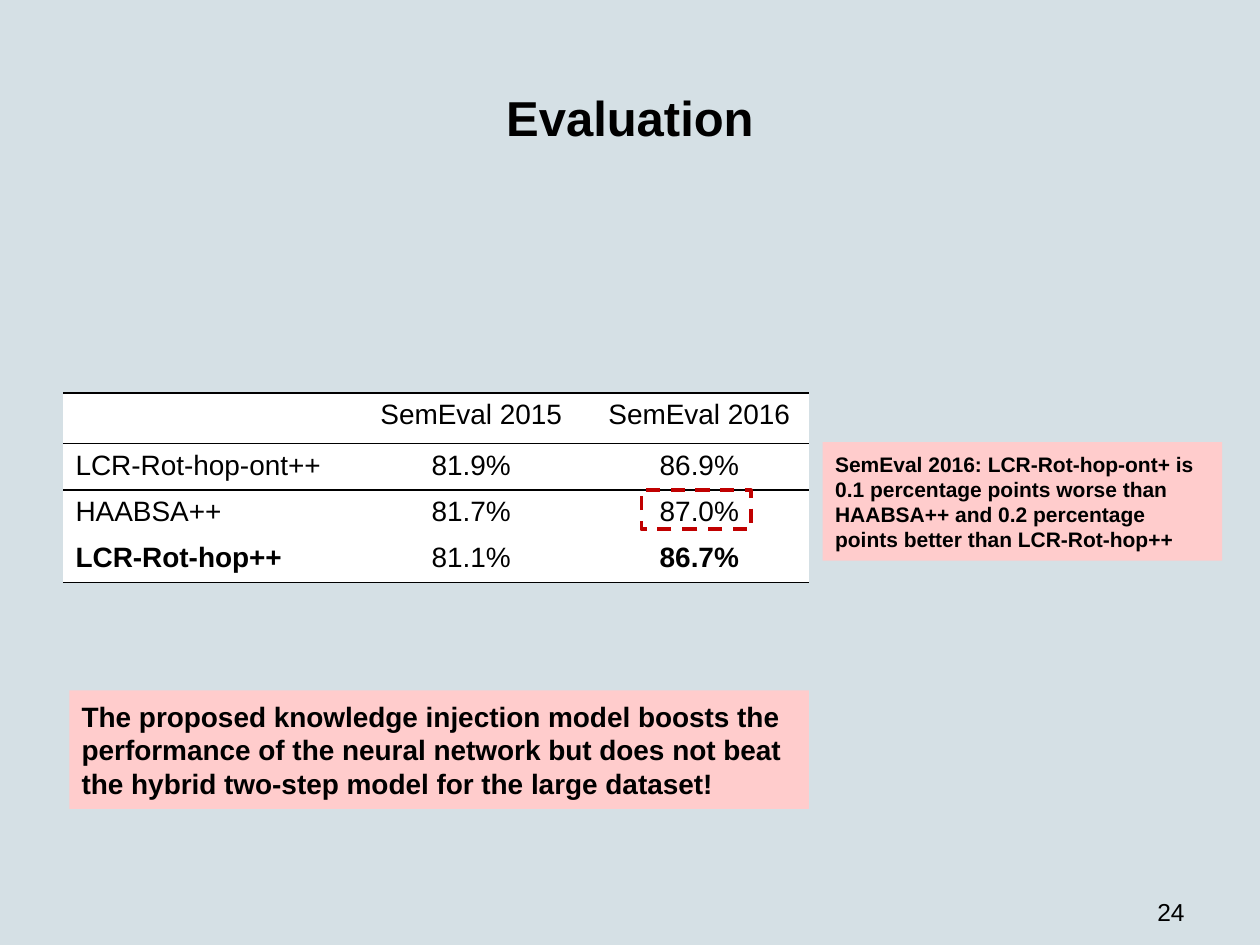
from lxml import etree
from pptx import Presentation
from pptx.dml.color import RGBColor
from pptx.enum.dml import MSO_LINE
from pptx.enum.shapes import MSO_SHAPE
from pptx.enum.text import MSO_ANCHOR, PP_ALIGN
from pptx.oxml.ns import qn
from pptx.util import Inches, Pt

RECTANGLE = MSO_SHAPE.RECTANGLE
DASH = MSO_LINE.DASH
MIDDLE, BOTTOM = MSO_ANCHOR.MIDDLE, MSO_ANCHOR.BOTTOM
LEFT, CENTER, RIGHT = PP_ALIGN.LEFT, PP_ALIGN.CENTER, PP_ALIGN.RIGHT

COLORS = {
    "background": "D5E0E5",
    "text": "000000",
    "rule": "000000",
    "cell": "FFFFFF",
    "callout": "FFCCCC",
    "highlight": "C00000",
}

RESULTS = [
    ["", "SemEval 2015", "SemEval 2016"],
    ["LCR-Rot-hop-ont++", "81.9%", "86.9%"],
    ["HAABSA++", "81.7%", "87.0%"],
    ["LCR-Rot-hop++", "81.1%", "86.7%"],
]
BOLD_CELLS = {(3, 0), (3, 2)}
RULED_EDGES = {0, 1, 2, 4}  # horizontal table edges, counted from the top


def color(name):
    return RGBColor.from_string(COLORS[name])


def set_format(target, values):
    for name, value in values.items():
        setattr(target, name, value)


class SlideBuilder:
    """Holds the text style and the slide being built."""

    font_name = "Arial"

    def __init__(self, slide):
        self.slide = slide
        self.fill(slide.background, "background")

    def fill(self, target, color_name):
        target.fill.solid()
        target.fill.fore_color.rgb = color(color_name)

    def add_words(self, frame, text, size, bold=False, alignment=LEFT):
        paragraph = frame.paragraphs[0]
        paragraph.alignment = alignment
        run = paragraph.add_run()
        run.text = text
        set_format(run.font, {"name": self.font_name, "size": Pt(size), "bold": bold})
        run.font.color.rgb = color("text")

    def text(self, text, box, size, anchor, **style):
        frame = self.slide.shapes.add_textbox(*map(Inches, box)).text_frame
        set_format(frame, {"word_wrap": True, "vertical_anchor": anchor})
        self.add_words(frame, text, size, **style)
        return frame

    def rectangle(self, box):
        shape = self.slide.shapes.add_shape(RECTANGLE, *map(Inches, box))
        shape.shadow.inherit = False
        return shape

    def callout(self, text, box, size):
        shape = self.rectangle(box)
        self.fill(shape, "callout")
        shape.line.fill.background()
        set_format(shape.text_frame, {"word_wrap": True, "vertical_anchor": MIDDLE})
        self.add_words(shape.text_frame, text, size, bold=True)

    def highlight(self, box):
        shape = self.rectangle(box)
        shape.fill.background()
        shape.line.color.rgb = color("highlight")
        set_format(shape.line, {"width": Pt(2), "dash_style": DASH})

    def borders(self, cell, top, bottom):
        """Rule the top and bottom of a cell as asked and clear its sides."""
        properties = cell._tc.get_or_add_tcPr()
        for tag, ruled in (("lnL", False), ("lnR", False), ("lnT", top), ("lnB", bottom)):
            line = etree.SubElement(properties, qn(f"a:{tag}"), w=str(Pt(1)))
            if ruled:
                solid = etree.SubElement(line, qn("a:solidFill"))
                etree.SubElement(solid, qn("a:srgbClr"), val=COLORS["rule"])
            else:
                etree.SubElement(line, qn("a:noFill"))

    def table(self, rows, left, top, widths, heights, size):
        box = (left, top, sum(widths), sum(heights))
        table = self.slide.shapes.add_table(
            len(rows), len(widths), *map(Inches, box)).table
        set_format(table, {"first_row": False, "horz_banding": False})
        for column, width in zip(table.columns, widths):
            column.width = Inches(width)
        for row_index, (values, height) in enumerate(zip(rows, heights)):
            table.rows[row_index].height = Inches(height)
            for column_index, value in enumerate(values):
                cell = table.cell(row_index, column_index)
                self.borders(cell, row_index in RULED_EDGES, row_index + 1 in RULED_EDGES)
                self.fill(cell, "cell")
                self.add_words(cell.text_frame, value, size,
                               bold=(row_index, column_index) in BOLD_CELLS,
                               alignment=CENTER if column_index else LEFT)


def main():
    presentation = Presentation()
    set_format(presentation, {"slide_width": Inches(10), "slide_height": Inches(7.5)})
    builder = SlideBuilder(presentation.slides.add_slide(presentation.slide_layouts[6]))

    builder.text("Evaluation", (0.5, 0.3, 9, 1.25), 28, MIDDLE, bold=True, alignment=CENTER)
    page_number = builder.text("24", (7.17, 6.83, 2.33, 0.52), 14, BOTTOM, alignment=RIGHT)
    page_number.margin_bottom = 0

    builder.table(RESULTS, 0.5, 3.12, [2.3, 1.88, 1.74], [0.39] + [0.35] * 3, 16)
    builder.highlight((5.09, 3.89, 0.87, 0.31))
    builder.callout(
        "SemEval 2016: LCR-Rot-hop-ont+ is 0.1 percentage points worse than "
        "HAABSA++ and 0.2 percentage points better than LCR-Rot-hop++",
        (6.53, 3.51, 3.17, 0.94), 12)
    builder.callout(
        "The proposed knowledge injection model boosts the performance of the "
        "neural network but does not beat the hybrid two-step model for the "
        "large dataset!",
        (0.55, 5.48, 5.87, 0.94), 16)

    presentation.save("out.pptx")


if __name__ == "__main__":
    main()
